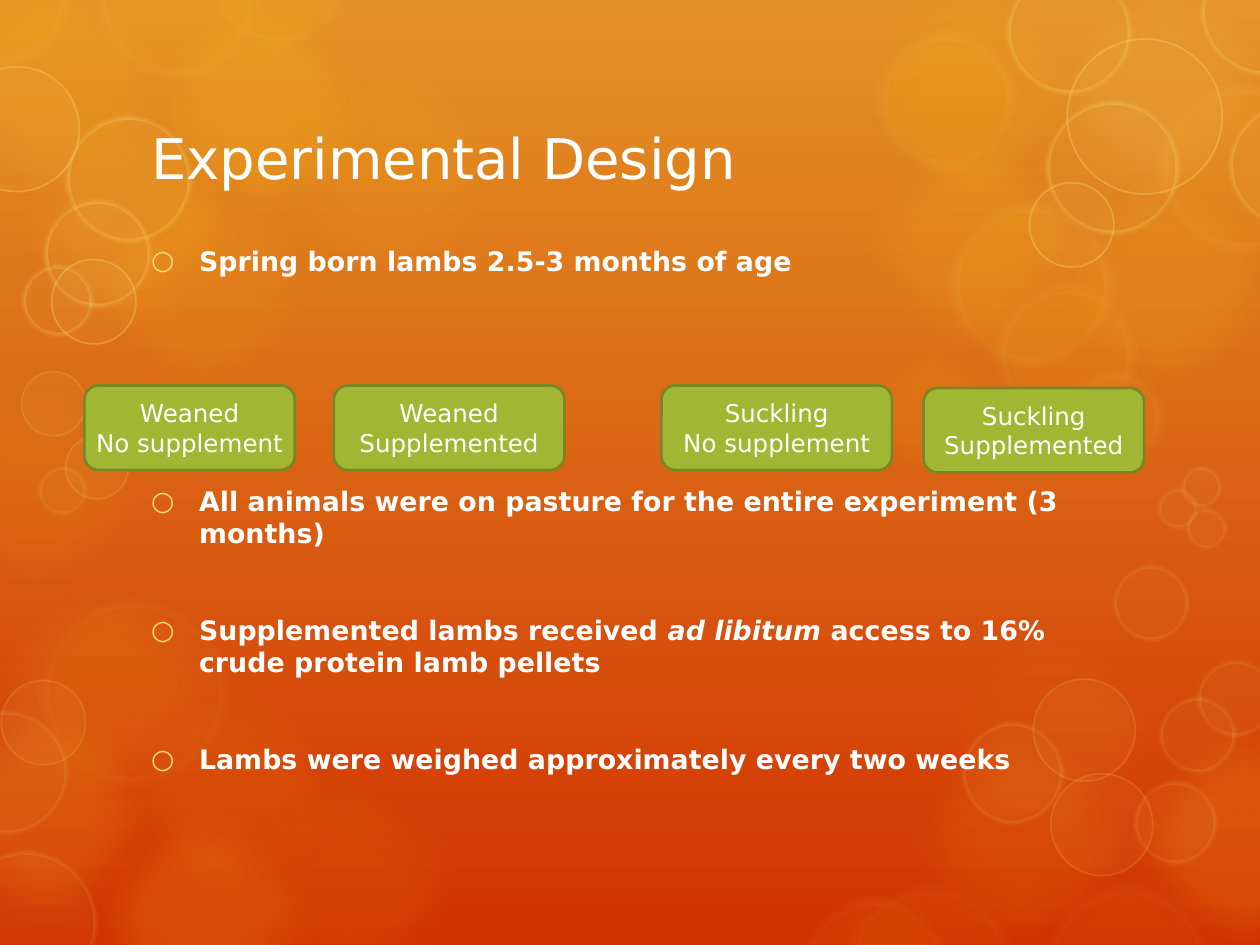
from lxml import etree
from pptx import Presentation
from pptx.dml.color import RGBColor
from pptx.enum import shapes, text
from pptx.oxml import ns
from pptx.util import Inches, Pt

FONT = "DejaVu Sans"
COLORS = {
    "sky": "E39325", "ember": "D13202", "gold": "FDC61B", "pale": "FFE281",
    "cream": "FEEBAE", "bullet": "FEDD78", "green": "A1B633",
    "olive": "778726", "white": "FFFFFF",
}
GLOWS = [
    (-0.26, 4.42, 8), (0.57, 1.2, 10), (2.05, 0.31, 10), (0.57, 6.27, 16),
    (-0.56, -0.32, 14), (1.01, -0.18, 20), (0, 0.72, 15), (6.69, -0.29, 10),
    (8.2, 1.2, 15), (8.81, 5.62, 16), (7.29, 4.77, 5), (-0.69, 5.41, 16),
    (0.77, 5.24, 8), (6.69, 0.86, 15), (7.06, 5.62, 10), (1.73, 5.96, 8),
    (-0.74, 2.82, 8),
]
HAZE = {"fill": "gold", "line": "cream", "width": 14, "soft": 0.12}
RING = {"fill": "pale", "alpha": 5, "line": "pale", "width": 1}
BLUR = {**RING, "width": 5, "soft": 0.04}
CIRCLES = [
    ({**HAZE, "alpha": 10, "line_alpha": 6}, [
        (9.18, 0.65, 1.37), (6.94, 0.23, 1.14), (7.52, 1.59, 1.33),
        (7.89, 2.24, 1.14), (8.47, 2.91, 0.79), (0.75, -0.66, 1.31),
        (1.64, -0.74, 1.13), (-0.57, -0.58, 1.14)]),
    ({**HAZE, "alpha": 6, "line_alpha": 4}, [
        (0.3, 4.73, 1.53), (6.32, 7.1, 1.24), (6.69, 7.01, 1.38),
        (8.28, 7.01, 1.34)]),
    ({**RING, "line_alpha": 30}, [
        (-0.36, 0.53, 0.99), (0.41, 2.06, 0.67), (8.47, 0.31, 1.23),
        (8.17, 1.45, 0.67)]),
    ({**BLUR, "line_alpha": 30}, [
        (0.52, 0.92, 1), (0.35, 1.59, 0.85), (0.17, 2.1, 0.57),
        (7.99, -0.24, 0.99), (9.53, -0.4, 1), (9.75, 0.82, 0.99),
        (8.3, 0.8, 1.06)]),
    ({**RING, "line_alpha": 15}, [
        (0.01, 5.4, 0.67), (8.34, 6.14, 0.81), (8.2, 5.39, 0.81),
        (0.17, 2.95, 0.51), (0.52, 3.46, 0.5)]),
    ({**BLUR, "line_alpha": 15}, [
        (-0.36, 6.75, 1.13), (-0.44, 5.64, 0.98), (7.63, 5.73, 0.81),
        (9, 6.2, 0.66), (8.83, 4.48, 0.61), (9.2, 5.53, 0.61),
        (9.5, 5.24, 0.61), (9.37, 3.7, 0.33), (9.18, 3.87, 0.33),
        (9.41, 4.03, 0.33), (0.3, 3.7, 0.39)]),
]
BULLETS = [
    ([("Spring born lambs 2.5-3 months of age", False)], 119),
    ([("All animals were on pasture for the entire experiment (3 months)", False)], 37),
    ([("Supplemented lambs received ", False), ("ad libitum ", True),
      ("access to 16% crude protein lamb pellets", False)], 37),
    ([("Lambs were weighed approximately every two weeks", False)], 0),
]
GROUPS = [
    (0.67, 3.06, 1.67, "Weaned", "No supplement"),
    (2.65, 3.06, 1.83, "Weaned", "Supplemented"),
    (5.25, 3.06, 1.83, "Suckling", "No supplement"),
    (7.33, 3.08, 1.75, "Suckling", "Supplemented"),
]


def rgb(name):
    """Return the named colour."""
    return RGBColor.from_string(COLORS[name])


def add_child(parent, tag, **attrs):
    """Append a drawing element with the given attributes."""
    return etree.SubElement(parent, ns.qn(tag), {k: str(v) for k, v in attrs.items()})


def paint(fill, color, alpha=100):
    """Fill solidly, with opacity in percent."""
    fill.solid()
    fill.fore_color.rgb = rgb(color)
    if alpha < 100:
        for clr in fill._xPr.iter(ns.qn("a:srgbClr")):
            add_child(clr, "a:alpha", val=alpha * 1000)


def add_run(p, content, size=14, color="white", bold=False, italic=False):
    """Add one formatted run to a paragraph."""
    r = p.add_run()
    r.text = content
    r.font.name, r.font.size = FONT, Pt(size)
    r.font.bold, r.font.italic = bold, italic
    r.font.color.rgb = rgb(color)


def add_circle(s, x, y, d, fill, alpha, line=None, line_alpha=100, width=1, soft=0):
    """Draw a translucent circle, optionally outlined and soft-edged."""
    sp = s.shapes.add_shape(shapes.MSO_SHAPE.OVAL, Inches(x), Inches(y), Inches(d), Inches(d))
    sp.shadow.inherit = False
    paint(sp.fill, fill, alpha)
    if line:
        sp.line.width = Pt(width)
        paint(sp.line.fill, line, line_alpha)
    else:
        sp.line.fill.background()
    if soft:
        effects = sp._element.spPr.find(ns.qn("a:effectLst"))
        add_child(effects, "a:softEdge", rad=Inches(soft))


def add_backdrop(s):
    """Paint the gradient and its circles."""
    fill = s.background.fill
    fill.gradient()
    fill.gradient_angle = 270
    for stop, color in zip(fill.gradient_stops, ("sky", "ember")):
        stop.color.rgb = rgb(color)
    for x, y, alpha in GLOWS:
        add_circle(s, x, y, 2.09, "gold", alpha, soft=0.3)
    add_circle(s, 8.2, -0.32, 2.09, "pale", 10, soft=0.3)
    add_circle(s, 6.75, 2.62, 1.33, "gold", 10, soft=0.2)
    for style, places in CIRCLES:
        for x, y, d in places:
            add_circle(s, x, y, d, **style)


def place(s, sp, x, y, w, h, anchor):
    """Bring a placeholder forward, position it and return its text frame."""
    s.shapes._spTree.append(sp._element)
    sp.left, sp.top, sp.width, sp.height = map(Inches, (x, y, w, h))
    tf = sp.text_frame
    tf.word_wrap = True
    tf.auto_size = text.MSO_AUTO_SIZE.NONE
    tf.vertical_anchor = anchor
    return tf


def add_title(s, content):
    """Set the slide title."""
    tf = place(s, s.shapes.title, 1.1, 0.74, 7.79, 1.01, text.MSO_ANCHOR.MIDDLE)
    p = tf.paragraphs[0]
    p.alignment = text.PP_ALIGN.LEFT
    add_run(p, content, size=32)


def add_bullets(s):
    """Set the bulleted list, leaving room for the group boxes."""
    tf = place(s, s.placeholders[1], 1.1, 1.94, 7.79, 5.23, text.MSO_ANCHOR.TOP)
    tf.margin_top = 0
    for i, (runs, gap) in enumerate(BULLETS):
        p = tf.add_paragraph() if i else tf.paragraphs[0]
        p.space_before, p.space_after = Pt(0), Pt(gap)
        pPr = p._p.get_or_add_pPr()
        pPr.set("marL", str(Inches(0.38)))
        pPr.set("indent", str(-Inches(0.38)))
        add_child(add_child(pPr, "a:buClr"), "a:srgbClr", val=COLORS["bullet"])
        add_child(pPr, "a:buFont", typeface=FONT)
        add_child(pPr, "a:buChar", char="○")
        for content, italic in runs:
            add_run(p, content, size=15.3, bold=True, italic=italic)


def add_group(s, x, y, w, *lines):
    """Draw a treatment group box with its label."""
    sp = s.shapes.add_shape(shapes.MSO_SHAPE.ROUNDED_RECTANGLE,
                            Inches(x), Inches(y), Inches(w), Inches(0.67))
    sp.shadow.inherit = False
    paint(sp.fill, "green")
    sp.line.width = Pt(1.5)
    paint(sp.line.fill, "olive")
    tf = sp.text_frame
    tf.word_wrap = True
    tf.vertical_anchor = text.MSO_ANCHOR.MIDDLE
    tf.margin_left = tf.margin_right = tf.margin_top = tf.margin_bottom = 0
    for i, line in enumerate(lines):
        p = tf.add_paragraph() if i else tf.paragraphs[0]
        p.alignment = text.PP_ALIGN.CENTER
        add_run(p, line)


def main():
    """Build and save the slide."""
    prs = Presentation()
    prs.slide_width, prs.slide_height = Inches(10), Inches(7.5)
    s = prs.slides.add_slide(prs.slide_layouts[1])
    title, body = s.shapes.title, s.placeholders[1]
    add_backdrop(s)
    add_title(s, "Experimental Design")
    add_bullets(s)
    for group in GROUPS:
        add_group(s, *group)
    prs.save("out.pptx")


if __name__ == "__main__":
    main()
